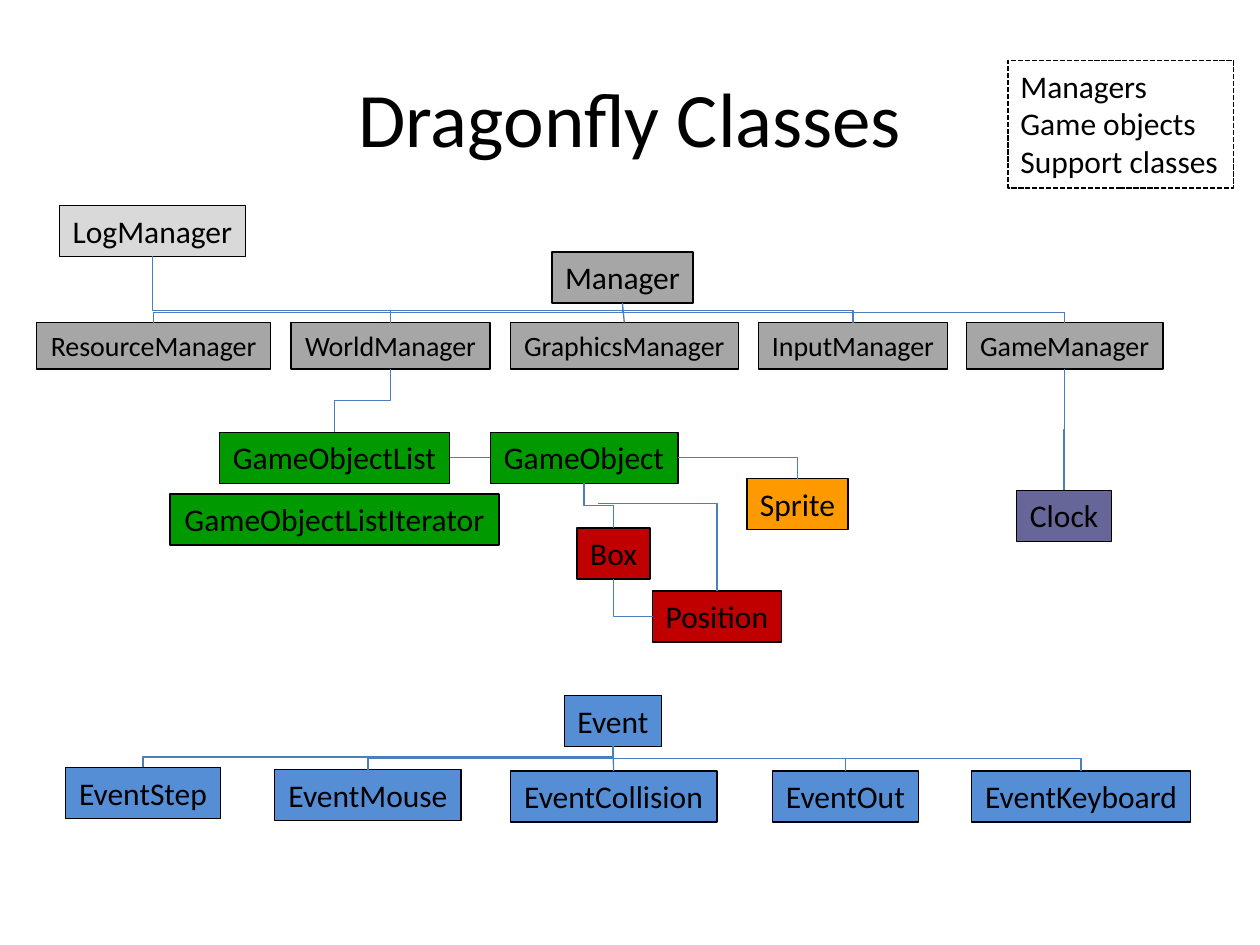
from lxml.etree import SubElement
from pptx import Presentation
from pptx.dml.color import RGBColor
from pptx.enum.dml import MSO_LINE
from pptx.enum.shapes import MSO_CONNECTOR, MSO_SHAPE
from pptx.enum.text import MSO_ANCHOR, MSO_AUTO_SIZE, PP_ALIGN
from pptx.oxml.ns import qn
from pptx.util import Inches, Pt

UNIT = Inches(0.1)  # the slide is a grid of 100 columns by 75 rows
COLS, ROWS = 100, 75
FONT = "Calibri"
COLORS = {
    "ink": "000000", "link": "4B7EBC", "log": "D9D9D9", "manager": "A6A6A6",
    "object": "009900", "sprite": "FF9900", "shape": "C00000",
    "clock": "666699", "event": "558ED5",
}


def color(name):
    return RGBColor.from_string(COLORS[name])


def style(frame, size, align):
    for para in frame.paragraphs:
        para.alignment = align
        for run in para.runs:
            run.font.size = Pt(size)
            run.font.name = FONT
            run.font.color.rgb = color("ink")


def add_box(slide, box, text, fill=None, size=18, align=PP_ALIGN.CENTER):
    shape = slide.shapes.add_shape(
        MSO_SHAPE.RECTANGLE, *(int(n * UNIT) for n in box))
    shape.shadow.inherit = False
    if fill:
        shape.fill.solid()
        shape.fill.fore_color.rgb = color(fill)
    else:
        shape.fill.background()
    shape.line.color.rgb = color("ink")
    shape.line.width = Pt(0.75)
    frame = shape.text_frame
    frame.text = text
    frame.word_wrap = False
    frame.auto_size = MSO_AUTO_SIZE.SHAPE_TO_FIT_TEXT
    frame.vertical_anchor = MSO_ANCHOR.TOP
    style(frame, size, align)
    return shape


def add_row(slide, area, fill, items, size=18, height=4.05):
    """Place (name, column, row, width) items inside area; return them by name."""
    left, top = area[:2]
    return {name: add_box(slide, (left + x, top + y, width, height),
                          name, fill, size)
            for name, x, y, width in items}


def point(shape, side, right=0, down=0):
    """Middle of one side of a shape, moved by grid units."""
    across = {"left": 0, "right": 1}.get(side, 0.5)
    along = {"top": 0, "bottom": 1}.get(side, 0.5)
    return (int(shape.left + across * shape.width + right * UNIT),
            int(shape.top + along * shape.height + down * UNIT))


def link(slide, start, end, kind="step"):
    """Join two points downwards.

    line: straight; step: down, across, down; drop: down, then across;
    side: across, then down.
    """
    bent = kind != "line"
    form = MSO_CONNECTOR.ELBOW if bent else MSO_CONNECTOR.STRAIGHT
    line = slide.shapes.add_connector(form, *start, *end)
    line.line.color.rgb = color("link")
    line.line.width = Pt(0.75)
    props = line._element.spPr
    if kind in ("drop", "side"):
        props.find(qn("a:prstGeom")).set("prst", "bentConnector2")
    if kind in ("step", "drop"):
        # A turned connector keeps its centre and swaps its two extents.
        (x1, y1), (x2, y2) = start, end
        wide, high = abs(x2 - x1), abs(y2 - y1)
        line.left = (x1 + x2 - high) // 2
        line.top = (y1 + y2 - wide) // 2
        line.width, line.height = high, wide
        frame = props.find(qn("a:xfrm"))
        frame.attrib.pop("flipH", None)
        frame.set("rot", str((270 if x2 > x1 else 90) * 60000))
        if x2 > x1:
            frame.set("flipH", "1")
    SubElement(props, qn("a:effectLst"))


def add_title(slide, box):
    title = slide.shapes.title
    title.left, title.top, title.width, title.height = (
        int(n * UNIT) for n in box)
    title.text_frame.text = "Dragonfly Classes"
    title.text_frame.vertical_anchor = MSO_ANCHOR.MIDDLE
    style(title.text_frame, 44, PP_ALIGN.CENTER)


def add_legend(slide, box):
    legend = add_box(slide, box, "Managers\nGame objects\nSupport classes",
                     align=PP_ALIGN.LEFT)
    legend.line.width = Pt(1)
    legend.line.dash_style = MSO_LINE.SQUARE_DOT
    legend.line._ln.find(qn("a:prstDash")).set("val", "sysDash")


def add_managers(slide, area):
    log = add_row(slide, area, "log", [("LogManager", 4.7, 0, 14.8)])["LogManager"]
    root = add_row(slide, area, "manager", [("Manager", 43.8, 3.7, 11.2)])["Manager"]
    kids = add_row(slide, area, "manager", [
        ("ResourceManager", 2.9, 9.3, 18.6), ("WorldManager", 23.1, 9.3, 15.8),
        ("GraphicsManager", 40.5, 9.3, 18.1), ("InputManager", 60.2, 9.3, 15),
        ("GameManager", 76.7, 9.3, 15.6)], size=16, height=3.7)
    base, bus = point(root, "bottom"), point(root, "bottom", down=0.6)
    link(slide, base, point(kids["GraphicsManager"], "top"), "line")
    for name in ("ResourceManager", "GameManager"):
        link(slide, base, point(kids[name], "top"))
    for name in ("WorldManager", "InputManager"):
        link(slide, bus, point(kids[name], "top"), "side")
    link(slide, point(log, "bottom"), bus, "drop")
    return kids


def add_objects(slide, area):
    parts = add_row(slide, area, "object", [
        ("GameObject", 38.9, 0, 14.9), ("GameObjectList", 17.4, 0, 18.3),
        ("GameObjectListIterator", 13.5, 4.9, 26.1)])
    parts |= add_row(slide, area, "shape", [
        ("Box", 45.8, 7.6, 5.8), ("Position", 51.8, 12.6, 10.2)])
    parts |= add_row(slide, area, "sprite", [("Sprite", 59.3, 3.7, 8)])
    parts |= add_row(slide, area, "clock", [("Clock", 80.7, 4.6, 7.5)])
    core, box, place = (parts[n] for n in ("GameObject", "Box", "Position"))
    link(slide, point(core, "left"), point(parts["GameObjectList"], "right"), "line")
    link(slide, point(core, "right"), point(parts["Sprite"], "top"), "side")
    link(slide, point(core, "bottom"), point(box, "top"))
    link(slide, point(core, "bottom", 1.1, 1.6), point(place, "top"), "side")
    link(slide, point(box, "bottom"), point(place, "left"), "drop")
    return parts


def add_events(slide, area):
    root = add_row(slide, area, "event", [("Event", 44.8, 0, 7.7)])["Event"]
    kids = add_row(slide, area, "event", [
        ("EventStep", 5.2, 5.7, 12.3), ("EventMouse", 21.8, 5.9, 14.8),
        ("EventCollision", 40.5, 6, 16.4), ("EventOut", 61.3, 6, 11.6),
        ("EventKeyboard", 77.1, 6, 17.4)])
    for name, kid in kids.items():
        kind = "line" if name == "EventCollision" else "step"
        link(slide, point(root, "bottom"), point(kid, "top"), kind)


def main():
    deck = Presentation()
    deck.slide_width, deck.slide_height = COLS * UNIT, ROWS * UNIT
    slide = deck.slides.add_slide(deck.slide_layouts[5])
    add_title(slide, (5, 3, 90, 12.5))
    managers = add_managers(slide, (0, 16.3, COLS, 13))
    objects = add_objects(slide, (0, 34.3, COLS, 17))
    add_events(slide, (0, 55.2, COLS, 10))
    for owner, part in (("WorldManager", "GameObjectList"), ("GameManager", "Clock")):
        link(slide, point(managers[owner], "bottom"), point(objects[part], "top"))
    add_legend(slide, (80, 4.8, 17.9, 10.1))
    deck.save("out.pptx")


if __name__ == "__main__":
    main()
